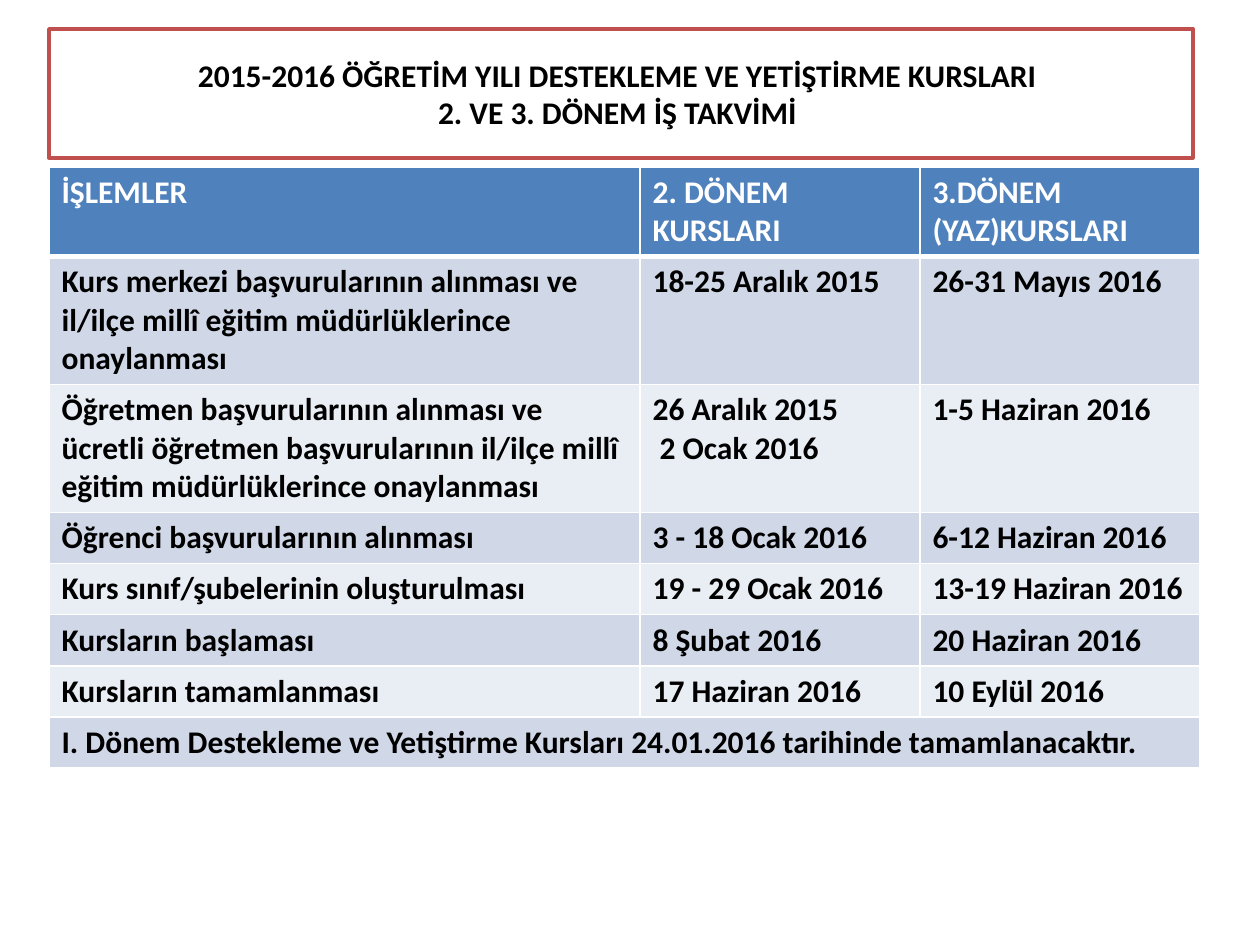
from dataclasses import dataclass

from lxml import etree
from pptx import Presentation
from pptx.dml.color import RGBColor
from pptx.enum.shapes import MSO_SHAPE
from pptx.enum.text import MSO_ANCHOR, PP_ALIGN
from pptx.oxml.ns import qn
from pptx.util import Pt

RECTANGLE = MSO_SHAPE.RECTANGLE
MIDDLE = MSO_ANCHOR.MIDDLE
CENTER = PP_ALIGN.CENTER

WHITE = RGBColor(0xFF, 0xFF, 0xFF)
BLACK = RGBColor(0x00, 0x00, 0x00)
RED = RGBColor(0xC0, 0x50, 0x4D)
BLUE = RGBColor(0x4F, 0x81, 0xBD)
BANDS = (RGBColor(0xD0, 0xD8, 0xE8), RGBColor(0xE9, 0xED, 0xF4))

FONT = "Calibri"
FONT_SIZE = 18
COLUMN_WIDTHS = (591, 280, 280)
ROW_HEIGHT = 51
TABLE_HEIGHT = 632

TITLE = (
    "2015-2016 ÖĞRETİM YILI DESTEKLEME VE YETİŞTİRME KURSLARI \v"
    "2. VE 3. DÖNEM İŞ TAKVİMİ "
)


@dataclass(frozen=True)
class Step:
    task: str
    second_term: str = ""
    third_term: str = ""

    def texts(self) -> tuple[str, str, str]:
        return self.task, self.second_term, self.third_term


STEPS = (
    Step("İŞLEMLER", "2. DÖNEM KURSLARI", "3.DÖNEM\n(YAZ)KURSLARI"),
    Step(
        "Kurs merkezi başvurularının alınması ve il/ilçe millî eğitim "
        "müdürlüklerince onaylanması",
        "18-25 Aralık 2015",
        "26-31 Mayıs 2016",
    ),
    Step(
        "Öğretmen başvurularının alınması ve ücretli öğretmen başvurularının "
        "il/ilçe millî eğitim müdürlüklerince onaylanması",
        "26 Aralık 2015\n 2 Ocak 2016",
        "1-5 Haziran 2016",
    ),
    Step("Öğrenci başvurularının alınması", "3 - 18 Ocak 2016", "6-12 Haziran 2016"),
    Step("Kurs sınıf/şubelerinin oluşturulması", "19 - 29 Ocak 2016", "13-19 Haziran 2016"),
    Step("Kursların başlaması", "8 Şubat 2016", "20 Haziran 2016"),
    Step("Kursların tamamlanması", "17 Haziran 2016", "10 Eylül 2016"),
    Step("I. Dönem Destekleme ve Yetiştirme Kursları 24.01.2016 tarihinde tamamlanacaktır."),
)


def px(length: int) -> int:
    return round(length * 914400 / 126)


def write(text_frame, text: str, color: RGBColor) -> None:
    text_frame.text = text
    for para in text_frame.paragraphs:
        for span in para.runs:
            span.font.name = FONT
            span.font.size = Pt(FONT_SIZE)
            span.font.bold = True
            span.font.color.rgb = color


def add_border(cell, side: str, width: float) -> None:
    properties = cell._tc.get_or_add_tcPr()
    line = etree.SubElement(properties, qn(f"a:{side}"), w=str(Pt(width)))
    fill = etree.SubElement(line, qn("a:solidFill"))
    etree.SubElement(fill, qn("a:srgbClr"), val=str(WHITE))


def draw_title(page) -> None:
    box = page.shapes.add_shape(RECTANGLE, px(49), px(29), px(1144), px(129))
    box.shadow.inherit = False
    box.fill.solid()
    box.fill.fore_color.rgb = WHITE
    box.line.color.rgb = RED
    box.line.width = Pt(2)
    box.text_frame.word_wrap = True
    box.text_frame.vertical_anchor = MIDDLE
    write(box.text_frame, TITLE, BLACK)
    box.text_frame.paragraphs[0].alignment = CENTER


def draw_cell(cell, text: str, row: int) -> None:
    is_header = row == 0
    for side in ("lnL", "lnR", "lnT", "lnB"):
        width = 3 if (is_header and side == "lnB") or (row == 1 and side == "lnT") else 1
        add_border(cell, side, width)
    cell.fill.solid()
    cell.fill.fore_color.rgb = BLUE if is_header else BANDS[(row - 1) % 2]
    write(cell.text_frame, text, WHITE if is_header else BLACK)


def draw_schedule(page) -> None:
    frame = page.shapes.add_table(
        len(STEPS), len(COLUMN_WIDTHS),
        px(49), px(167), px(sum(COLUMN_WIDTHS)), px(TABLE_HEIGHT),
    )
    table = frame.table
    for column, width in zip(table.columns, COLUMN_WIDTHS):
        column.width = px(width)
    for row, step in enumerate(STEPS):
        table.rows[row].height = px(ROW_HEIGHT)
        for column, text in enumerate(step.texts()):
            draw_cell(table.cell(row, column), text, row)
    last = len(STEPS) - 1
    table.cell(last, 0).merge(table.cell(last, len(COLUMN_WIDTHS) - 1))
    frame.height = px(TABLE_HEIGHT)


def main() -> None:
    deck = Presentation()
    deck.slide_width = px(1260)
    deck.slide_height = px(945)
    page = deck.slides.add_slide(deck.slide_layouts[6])
    draw_title(page)
    draw_schedule(page)
    deck.save("out.pptx")


if __name__ == "__main__":
    main()
